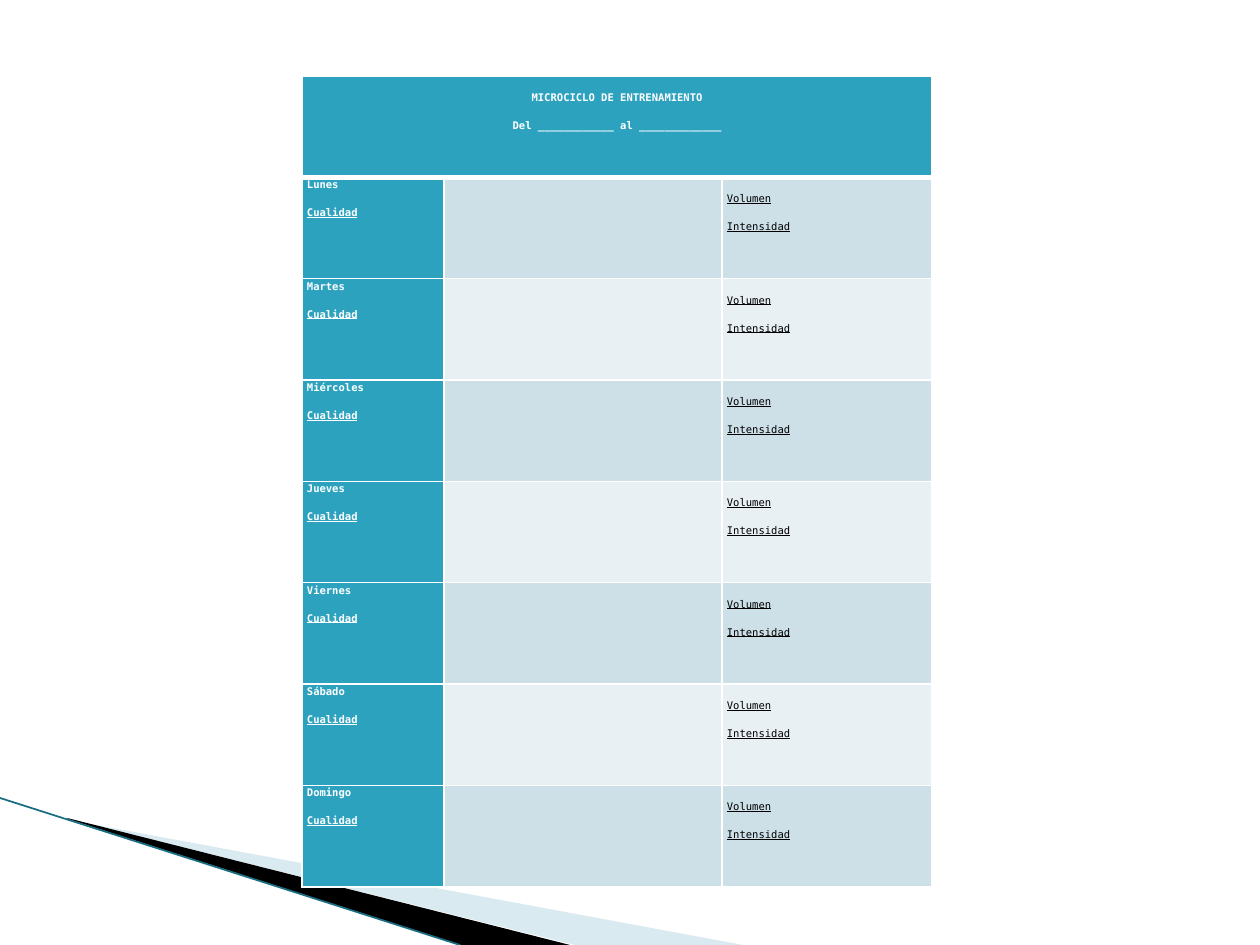
from dataclasses import dataclass

from lxml.etree import SubElement
from pptx import Presentation
from pptx.dml.color import RGBColor
from pptx.enum.shapes import MSO_CONNECTOR
from pptx.enum.text import PP_ALIGN
from pptx.oxml import parse_xml
from pptx.oxml.ns import nsdecls, qn
from pptx.util import Emu, Pt

SCALE = 914400 / 126


@dataclass(frozen=True)
class Theme:
    accent: str = "2DA2BF"
    band_dark: str = "CDE0E8"
    band_light: str = "E8F0F4"
    white: str = "FFFFFF"
    black: str = "000000"
    pale_wedge: str = "A0CBDC"
    edge: str = "1A6E82"
    font: str = "DejaVu Sans Mono"
    text_size: float = 6
    paragraph_gap: float = 8
    thin: float = 1
    thick: float = 3


@dataclass(frozen=True)
class Wedge:
    points: tuple[tuple[int, int], ...]
    color: str
    opacity: int = 100


@dataclass(frozen=True)
class CellText:
    lines: tuple[str, ...]
    color: str
    bold: bool
    underlined: tuple[str, ...] = ()
    align: PP_ALIGN = PP_ALIGN.JUSTIFY
    top: int = 0


THEME = Theme()
DAYS = ("Lunes", "Martes", "Miércoles", "Jueves", "Viernes", "Sábado", "Domingo")
COLUMNS = (142, 278, 210)
WEDGES = (
    Wedge(((69, 820), (743, 945), (575, 945), (69, 819)), THEME.pale_wedge, 40),
    Wedge(((67, 818), (570, 945), (461, 945), (68, 819)), THEME.black),
)
HEADING = CellText(
    ("MICROCICLO DE ENTRENAMIENTO", "Del ____________ al _____________"),
    THEME.white, True, align=PP_ALIGN.CENTER, top=14,
)
LOAD = CellText(
    ("Volumen", "Intensidad"), THEME.black, False, ("Volumen", "Intensidad"), top=14
)


def px(length: int) -> Emu:
    return Emu(round(length * SCALE))


def apply_format(target, values: dict) -> None:
    for name, value in values.items():
        setattr(target, name, value)


def set_fill(target, color: str) -> None:
    target.fill.solid()
    target.fill.fore_color.rgb = RGBColor.from_string(color)


def draw_wedge(page, wedge: Wedge) -> None:
    points = [(px(x), px(y)) for x, y in wedge.points]
    builder = page.shapes.build_freeform(*points[0], scale=1.0)
    builder.add_line_segments(points[1:], close=True)
    shape = builder.convert_to_shape()
    shape.shadow.inherit = False
    set_fill(shape, wedge.color)
    shape.line.fill.background()
    if wedge.opacity < 100:
        color = shape.fill._xPr.find(f".//{qn('a:srgbClr')}")
        SubElement(color, qn("a:alpha")).set("val", str(wedge.opacity * 1000))


def draw_edge(page) -> None:
    line = page.shapes.add_connector(
        MSO_CONNECTOR.STRAIGHT, px(0), px(798), px(460), px(945)
    )
    line.line.color.rgb = RGBColor.from_string(THEME.edge)
    line.line.width = Pt(THEME.thin)
    SubElement(line._element.spPr, qn("a:effectLst"))


def set_borders(cell, top: float, bottom: float) -> None:
    properties = cell._tc.get_or_add_tcPr()
    widths = {"lnL": THEME.thin, "lnR": THEME.thin, "lnT": top, "lnB": bottom}
    for index, (side, width) in enumerate(widths.items()):
        border = parse_xml(
            f'<a:{side} {nsdecls("a")} w="{Pt(width)}"><a:solidFill>'
            f'<a:srgbClr val="{THEME.white}"/></a:solidFill></a:{side}>'
        )
        properties.insert(index, border)


def write_cell(cell, content: CellText) -> None:
    apply_format(cell, {
        "margin_left": px(5), "margin_right": px(5),
        "margin_top": px(content.top), "margin_bottom": 0,
    })
    frame = cell.text_frame
    for index, text in enumerate(content.lines):
        para = frame.add_paragraph() if index else frame.paragraphs[0]
        apply_format(para, {"alignment": content.align, "line_spacing": 1.15})
        if index:
            para.space_before = Pt(THEME.paragraph_gap)
        span = para.add_run()
        span.text = text
        apply_format(span.font, {
            "name": THEME.font, "size": Pt(THEME.text_size),
            "bold": content.bold, "underline": text in content.underlined,
        })
        span.font.color.rgb = RGBColor.from_string(content.color)


def draw_schedule(page) -> None:
    table = page.shapes.add_table(
        len(DAYS) + 1, len(COLUMNS), px(302), px(76), px(sum(COLUMNS)), px(811)
    ).table
    for column, width in zip(table.columns, COLUMNS):
        column.width = px(width)
    for row_index, row in enumerate(table.rows):
        band = THEME.band_dark if row_index % 2 else THEME.band_light
        for column_index, cell in enumerate(row.cells):
            heading = row_index == 0 or column_index == 0
            set_fill(cell, THEME.accent if heading else band)
            set_borders(
                cell,
                THEME.thick if row_index == 1 else THEME.thin,
                THEME.thick if row_index == 0 else THEME.thin,
            )
    table.cell(0, 0).merge(table.cell(0, len(COLUMNS) - 1))
    write_cell(table.cell(0, 0), HEADING)
    for row_index, day in enumerate(DAYS, start=1):
        quality = CellText((day, "Cualidad"), THEME.white, True, ("Cualidad",))
        write_cell(table.cell(row_index, 0), quality)
        write_cell(table.cell(row_index, 2), LOAD)


def main() -> None:
    deck = Presentation()
    apply_format(deck, {"slide_width": px(1260), "slide_height": px(945)})
    page = deck.slides.add_slide(deck.slide_layouts[6])
    for wedge in WEDGES:
        draw_wedge(page, wedge)
    draw_edge(page)
    draw_schedule(page)
    deck.save("out.pptx")


if __name__ == "__main__":
    main()
